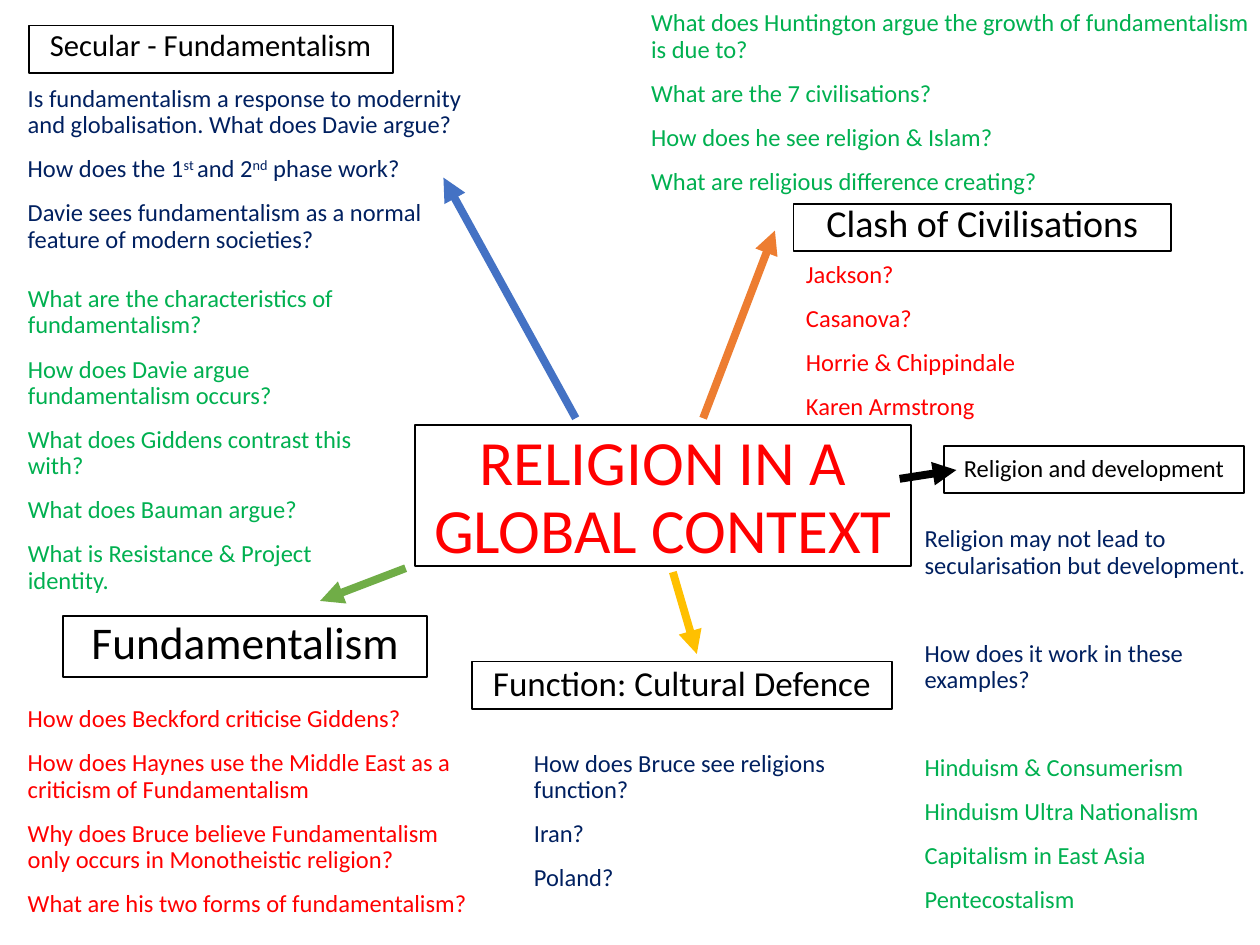
import pptx
import pptx.util
import pptx.dml.color
import pptx.enum.shapes
import pptx.enum.text
import pptx.oxml.ns
import lxml.etree

Pt = pptx.util.Pt
FONT = "Calibri"
HUE = {"red": "FF0000", "green": "00B050", "navy": "002060", "black": "000000",
       "white": "FFFFFF", "blue": "4472C4", "leaf": "70AD47",
       "orange": "ED7D31", "gold": "FFC000"}
GAP = 10    # space before each paragraph
WIDE = 35   # space before a new group of questions

# Headings: text, (left, top, width, height), size, line spacing, colour, anchor
HEADS = [
    ("RELIGION IN A GLOBAL CONTEXT", (237, 242.8, 283.8, 80.8), 36, 0.9, "red", "TOP"),
    ("Fundamentalism", (36, 352, 208.2, 34.8), 25.9, 0.8, "black", "MIDDLE"),
    ("Secular - Fundamentalism", (16.4, 14.6, 208.2, 27), 17.5, 0.7, "black", "MIDDLE"),
    ("Clash of Civilisations", (453.5, 116.5, 215.7, 27), 21.7, 0.7, "black", "MIDDLE"),
    ("Function: Cultural Defence", (269.8, 378, 239.8, 27), 20, 0.9, "black", "MIDDLE"),
    ("Religion and development", (539.4, 254.9, 171.6, 27), 14, 0.9, "black", "MIDDLE"),
]

# Questions: (left, top, width, height), then groups of colour and lines;
# every second part between ^ marks is superscript
NOTES = [
    ((8.8, 160, 223, 183.5), [("green", [
        "What are the characteristics of fundamentalism?",
        "How does Davie argue fundamentalism occurs?",
        "What does Giddens contrast this with?",
        "What does Bauman argue?",
        "What is Resistance & Project identity."])]),
    ((8.8, 395.3, 268.6, 137.5), [("red", [
        "How does Beckford criticise Giddens?",
        "How does Haynes use the Middle East as a criticism of Fundamentalism",
        "Why does Bruce believe Fundamentalism only occurs in Monotheistic religion?",
        "What are his two forms of fundamentalism?"])]),
    ((8.8, 38, 263, 118), [("navy", [
        "Is fundamentalism a response to modernity and globalisation. "
        "What does Davie argue?",
        "How does the 1^st ^and 2^nd^ phase work?",
        "Davie sees fundamentalism as a normal feature of modern societies?"])]),
    ((365, 0, 363, 118), [("green", [
        "What does Huntington argue the growth of fundamentalism is due to?",
        "What are the 7 civilisations?",
        "How does he see religion & Islam?",
        "What are religious difference creating?"])]),
    ((453.5, 149.8, 227.5, 90.7), [("red", [
        "Jackson?", "Casanova?", "Horrie & Chippindale", "Karen Armstrong"])]),
    ((298, 410.4, 183, 118), [("navy", [
        "How does Bruce see religions function?", "Iran?", "Poland?"])]),
    ((521.3, 283, 198.7, 257), [
        ("navy", ["Religion may not lead to secularisation but development."]),
        ("navy", ["How does it work in these examples?"]),
        ("green", ["Hinduism & Consumerism", "Hinduism Ultra Nationalism",
                   "Capitalism in East Asia", "Pentecostalism"])]),
]

# Arrows: colour, from x, from y, to x, to y
ARROWS = [
    ("blue", 329, 239, 253.4, 101.5),
    ("leaf", 231.8, 324.7, 182.9, 343.4),
    ("orange", 401.8, 239, 442.8, 131.8),
    ("gold", 384.5, 326.9, 398.2, 373.7),
    ("black", 514.1, 273.6, 546.5, 268.6),
]


def rgb(name):
    return pptx.dml.color.RGBColor.from_string(HUE[name])


def style(run, size, hue):
    run.font.name = FONT
    run.font.size = Pt(size)
    run.font.color.rgb = rgb(hue)


def space(para, gap, ratio):
    para.space_before = Pt(gap)
    para.line_spacing = ratio


def add_head(slide, text, area, size, ratio, hue, anchor):
    box = slide.shapes.add_shape(pptx.enum.shapes.MSO_SHAPE.RECTANGLE, *map(Pt, area))
    box.shadow.inherit = False
    box.fill.solid()
    box.fill.fore_color.rgb = rgb("white")
    box.line.color.rgb = rgb("black")
    box.line.width = Pt(1)
    frame = box.text_frame
    frame.word_wrap = True
    frame.vertical_anchor = pptx.enum.text.MSO_ANCHOR[anchor]
    frame.text = text
    para = frame.paragraphs[0]
    para.alignment = pptx.enum.text.PP_ALIGN.CENTER
    space(para, GAP, ratio)
    style(para.runs[0], size, hue)


def add_note(slide, area, groups):
    frame = slide.shapes.add_textbox(*map(Pt, area)).text_frame
    frame.word_wrap = True
    frame.vertical_anchor = pptx.enum.text.MSO_ANCHOR.MIDDLE
    lines = [(hue, text, WIDE if g and not i else GAP)
             for g, (hue, texts) in enumerate(groups)
             for i, text in enumerate(texts)]
    for n, (hue, text, gap) in enumerate(lines):
        para = frame.add_paragraph() if n else frame.paragraphs[0]
        space(para, gap, 0.9)
        for k, part in enumerate(text.split("^")):
            run = para.add_run()
            run.text = part
            style(run, 14, hue)
            if k % 2:
                run.font._element.set("baseline", "30000")


def add_arrow(slide, hue, *ends):
    line = slide.shapes.add_connector(
        pptx.enum.shapes.MSO_CONNECTOR.STRAIGHT, *map(Pt, ends))
    line.line.color.rgb = rgb(hue)
    line.line.width = Pt(4.5)
    qn = pptx.oxml.ns.qn
    props = line._element.spPr
    lxml.etree.SubElement(props.find(qn("a:ln")), qn("a:tailEnd"), type="triangle")
    lxml.etree.SubElement(props, qn("a:effectLst"))


def main():
    deck = pptx.Presentation()
    deck.slide_width, deck.slide_height = Pt(720), Pt(540)
    slide = deck.slides.add_slide(deck.slide_layouts[6])
    for head in HEADS:
        add_head(slide, *head)
    for note in NOTES:
        add_note(slide, *note)
    for arrow in ARROWS:
        add_arrow(slide, *arrow)
    deck.save("out.pptx")


if __name__ == "__main__":
    main()
